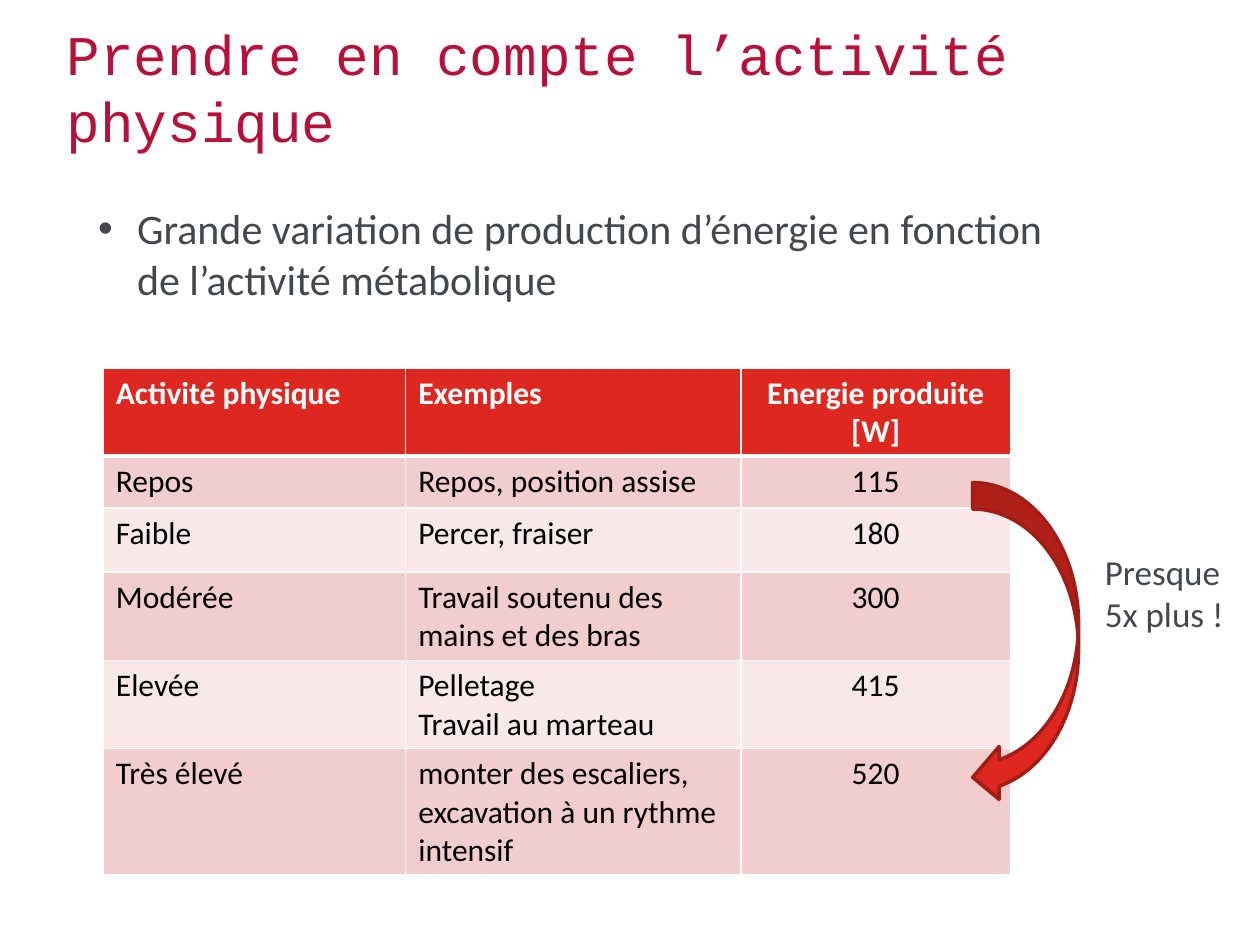
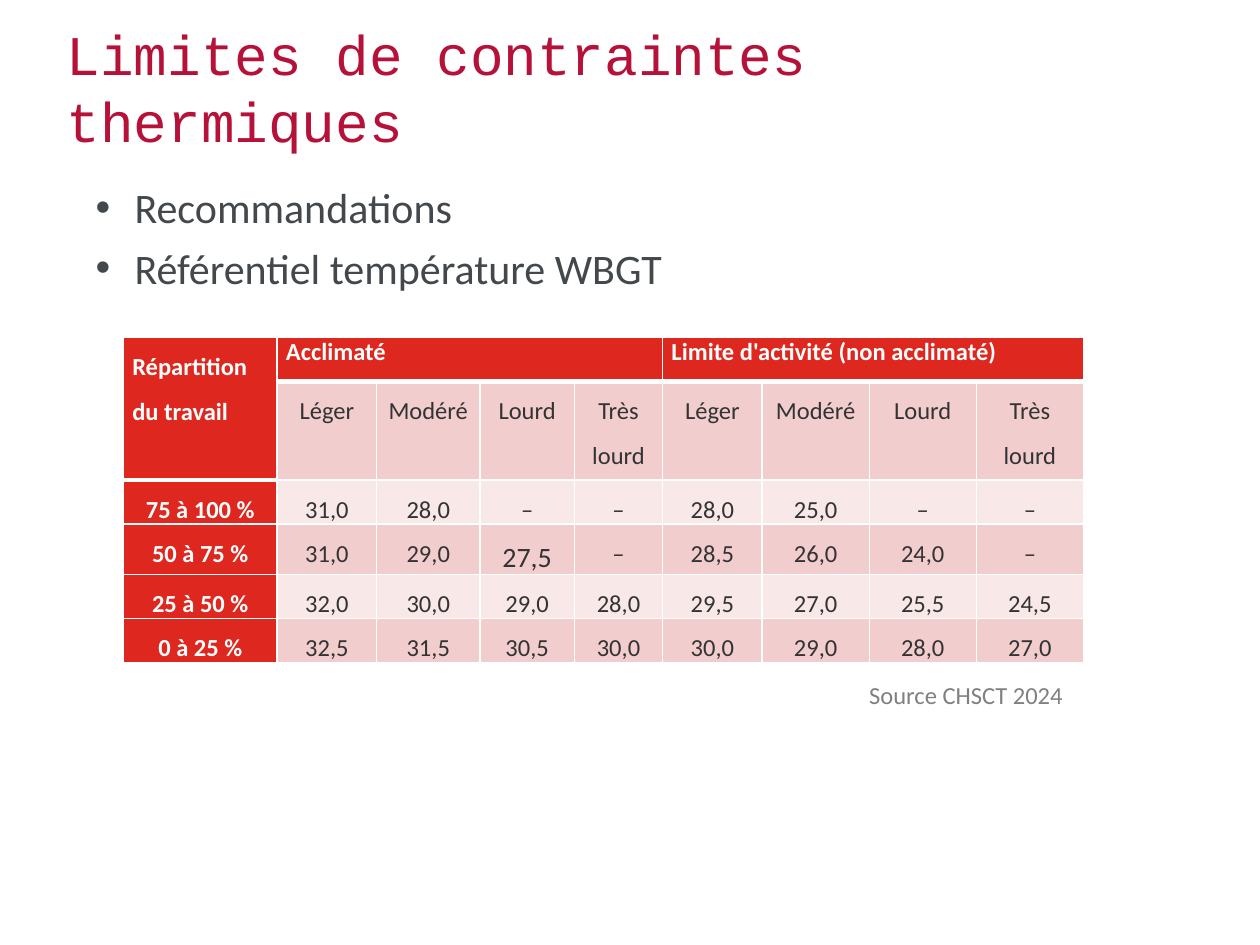
import pptx
import pptx.dml.color
import pptx.enum.shapes
import pptx.enum.text
import pptx.oxml
import pptx.oxml.ns
import pptx.util

Inches = pptx.util.Inches
Pt = pptx.util.Pt
ALIGN = pptx.enum.text.PP_ALIGN
ANCHOR = pptx.enum.text.MSO_ANCHOR

COLORS = {
    "title": "B61239",
    "body": "43484C",
    "header": "DD271F",
    "arrow_edge": "A31D17",
    "dark_band": "F2CDCD",
    "light_band": "F9E8E8",
    "white": "FFFFFF",
    "black": "000000",
    "figures": "333333",
    "source": "808080",
}

TITLE = {"name": "Courier New", "size": Pt(32), "color": "title"}
BODY = {"name": "Calibri", "size": Pt(24), "color": "body"}
NOTE = {**BODY, "size": Pt(20)}
SOURCE = {**BODY, "size": Pt(14), "color": "source"}
CELL = {"name": "Calibri", "size": Pt(18), "color": "black", "bold": False}
CELL_HEADER = {**CELL, "color": "white", "bold": True}
LIMIT = {**CELL, "size": Pt(14), "color": "figures"}
LIMIT_HEADER = {**LIMIT, "color": "white", "bold": True}

TITLE_FRAME = {
    "vertical_anchor": ANCHOR.MIDDLE,
    "margin_left": Inches(0.07),
    "margin_right": Inches(0.07),
    "margin_top": Inches(0.04),
    "margin_bottom": Inches(0.04),
}
TIGHT_CELL = {
    "margin_left": Inches(0.07),
    "margin_right": Inches(0.07),
    "margin_top": 0,
    "margin_bottom": 0,
}
SPACED = {"space_after": Pt(6)}
CENTERED = {"alignment": ALIGN.CENTER}
OPEN_LINES = {"line_spacing": 1.5}

ACTIVITY_COLUMNS = [2.4, 2.66, 2.14]
ACTIVITY_ROWS = [0.41, 0.41, 0.51, 0.41, 0.41, 0.41]
ACTIVITIES = [
    ["Activité physique", "Exemples", "Energie produite [W]"],
    ["Repos", "Repos, position assise", "115"],
    ["Faible", "Percer, fraiser", "180"],
    ["Modérée", "Travail soutenu des mains et des bras", "300"],
    ["Elevée", "Pelletage\nTravail au marteau", "415"],
    ["Très élevé", "monter des escaliers, excavation à un rythme intensif", "520"],
]

LIMIT_COLUMNS = [1.22, 0.79, 0.82, 0.75, 0.7, 0.79, 0.85, 0.85, 0.85]
LIMIT_ROWS = [0.35, 0.78, 0.35, 0.35, 0.35, 0.35]
LOADS = ["Léger", "Modéré", "Lourd", "Très lourd"]
LIMITS = [
    ["75 à 100 %", "31,0", "28,0", "–", "–", "28,0", "25,0", "–", "–"],
    ["50 à 75 %", "31,0", "29,0", "27,5", "–", "28,5", "26,0", "24,0", "–"],
    ["25 à 50 %", "32,0", "30,0", "29,0", "28,0", "29,5", "27,0", "25,5", "24,5"],
    ["0 à 25 %", "32,5", "31,5", "30,5", "30,0", "30,0", "29,0", "28,0", "27,0"],
]


def rgb(color):
    return pptx.dml.color.RGBColor.from_string(COLORS[color])


def apply_values(target, values):
    for name, value in values.items():
        if name == "color":
            target.color.rgb = rgb(value)
        else:
            setattr(target, name, value)


def add_bullet(para):
    properties = para._p.get_or_add_pPr()
    properties.set("marL", str(Inches(0.31)))
    properties.set("indent", str(-Inches(0.31)))
    for tag, name, value in (("buFont", "typeface", "Arial"), ("buChar", "char", "•")):
        element = pptx.oxml.parse_xml(
            f'<a:{tag} {pptx.oxml.ns.nsdecls("a")} {name}="{value}"/>')
        properties.append(element)


def write_text(frame, text, font, layout, bulleted=False):
    for index, line in enumerate(text.split("\n")):
        para = frame.add_paragraph() if index else frame.paragraphs[0]
        if bulleted:
            add_bullet(para)
        apply_values(para, layout)
        span = para.add_run()
        span.text = line
        apply_values(span.font, font)


def add_text(page, box, text, font, layout, frame_values=None, bulleted=False):
    frame = page.shapes.add_textbox(*map(Inches, box)).text_frame
    frame.word_wrap = True
    apply_values(frame, frame_values or {})
    write_text(frame, text, font, layout, bulleted)


def add_title(page, text, width):
    add_text(page, (0.46, 0.41, width, 0.56), text, TITLE, {}, TITLE_FRAME)


def add_grid(page, left, top, columns, rows):
    box = (left, top, sum(columns), sum(rows))
    table = page.shapes.add_table(len(rows), len(columns), *map(Inches, box)).table
    for column, width in zip(table.columns, columns):
        column.width = Inches(width)
    for row, height in zip(table.rows, rows):
        row.height = Inches(height)
    return table


def style_cell(cell, fill, bottom=1):
    properties = cell._tc.get_or_add_tcPr()
    for side, width in (("L", 1), ("R", 1), ("T", 1), ("B", bottom)):
        properties.append(pptx.oxml.parse_xml(
            f'<a:ln{side} {pptx.oxml.ns.nsdecls("a")} w="{Pt(width)}"><a:solidFill>'
            f'<a:srgbClr val="{COLORS["white"]}"/></a:solidFill></a:ln{side}>'))
    cell.fill.solid()
    cell.fill.fore_color.rgb = rgb(fill)


def band_color(row):
    return "dark_band" if row % 2 else "light_band"


def add_activity_table(page, left, top):
    table = add_grid(page, left, top, ACTIVITY_COLUMNS, ACTIVITY_ROWS)
    for row, texts in enumerate(ACTIVITIES):
        for column, text in enumerate(texts):
            cell = table.cell(row, column)
            if row == 0:
                style_cell(cell, "header", bottom=3)
            else:
                style_cell(cell, band_color(row))
            font = CELL if row else CELL_HEADER
            write_text(cell.text_frame, text, font, CENTERED if column == 2 else {})


def add_limit_table(page, left, top):
    table = add_grid(page, left, top, LIMIT_COLUMNS, LIMIT_ROWS)
    headings = {
        0: ("Répartition du travail", OPEN_LINES),
        1: ("Acclimaté", {}),
        5: ("Limite d'activité (non acclimaté)", {}),
    }
    contents = [[""] * 9, [""] + LOADS * 2] + LIMITS
    for row, texts in enumerate(contents):
        for column, text in enumerate(texts):
            cell = table.cell(row, column)
            apply_values(cell, TIGHT_CELL)
            is_header = row == 0 or column == 0
            is_edge = row == 0 or (row == 1 and column == 0)
            style_cell(cell, "header" if is_header else band_color(row), 3 if is_edge else 1)
            if text:
                font = LIMIT_HEADER if is_header else LIMIT
                if text == "27,5":
                    font = {**font, "size": Pt(16)}
                write_text(cell.text_frame, text, font, {**CENTERED, **OPEN_LINES})
    for column, (text, layout) in headings.items():
        write_text(table.cell(0, column).text_frame, text, LIMIT_HEADER, layout)
    table.cell(0, 0).merge(table.cell(1, 0))
    for first in (1, 5):
        table.cell(0, first).merge(table.cell(0, first + 3))


def add_increase_arrow(page, left, top):
    kind = pptx.enum.shapes.MSO_SHAPE.CURVED_LEFT_ARROW
    arrow = page.shapes.add_shape(kind, *map(Inches, (left, top, 0.84, 2.55)))
    arrow.shadow.inherit = False
    arrow.fill.solid()
    arrow.fill.fore_color.rgb = rgb("header")
    arrow.line.color.rgb = rgb("arrow_edge")
    arrow.line.width = Pt(2)
    add_text(page, (left + 0.95, top + 0.49, 1.33, 1.19), "Presque 5x plus !", NOTE, SPACED)


def build_activity_page(page):
    add_title(page, "Prendre en compte l’activité physique", 8.1)
    add_text(
        page, (0.68, 1.56, 8.1, 2.27),
        "Grande variation de production d’énergie en fonction de l’activité métabolique",
        BODY, SPACED, bulleted=True)
    add_activity_table(page, 0.82, 2.92)
    add_increase_arrow(page, 7.72, 3.83)


def build_limit_page(page):
    add_title(page, "Limites de contraintes thermiques", 6.85)
    add_text(
        page, (0.66, 1.39, 7.78, 1.48), "Recommandations\nRéférentiel température WBGT",
        BODY, SPACED, bulleted=True)
    add_limit_table(page, 0.98, 2.68)
    add_text(page, (6.8, 5.35, 1.8, 0.34), "Source CHSCT 2024", SOURCE, {})


def main():
    deck = pptx.Presentation()
    deck.slide_width = Inches(10)
    deck.slide_height = Inches(7.5)
    for build_page in (build_activity_page, build_limit_page):
        build_page(deck.slides.add_slide(deck.slide_layouts[6]))
    deck.save("out.pptx")


if __name__ == "__main__":
    main()
